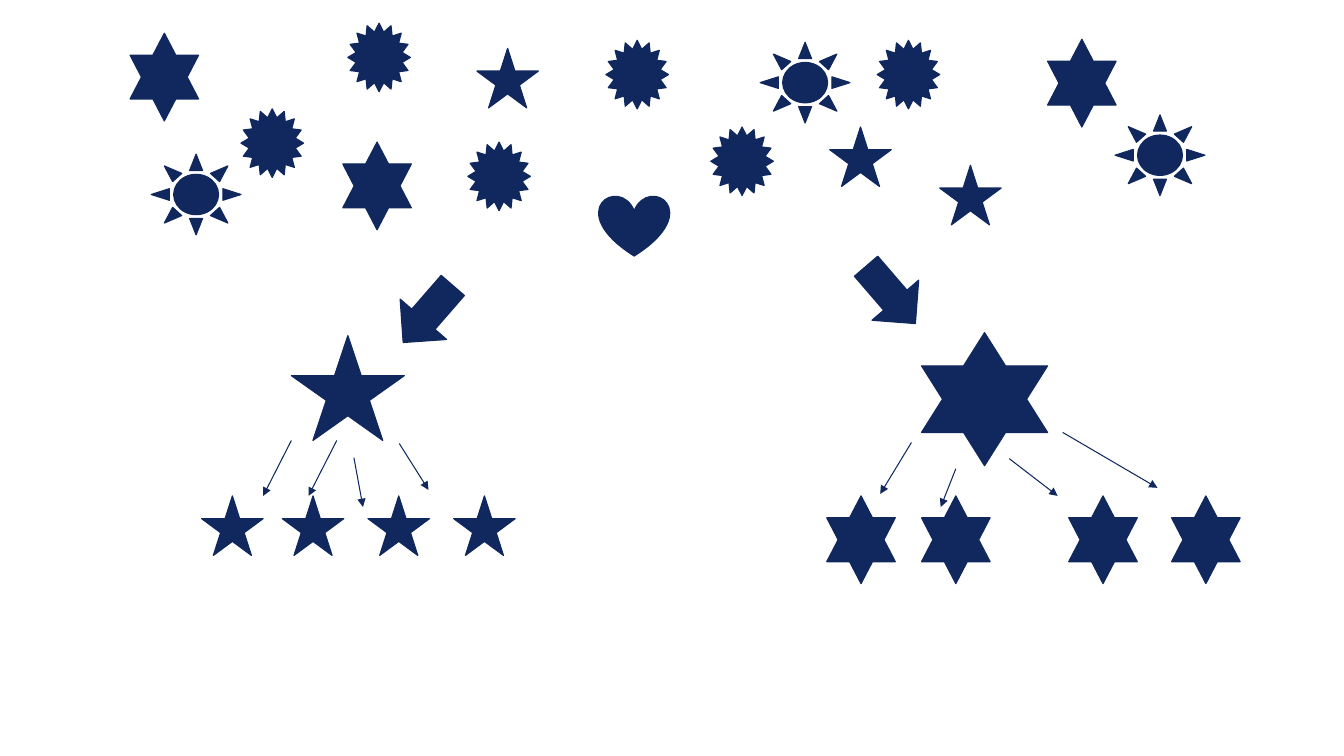
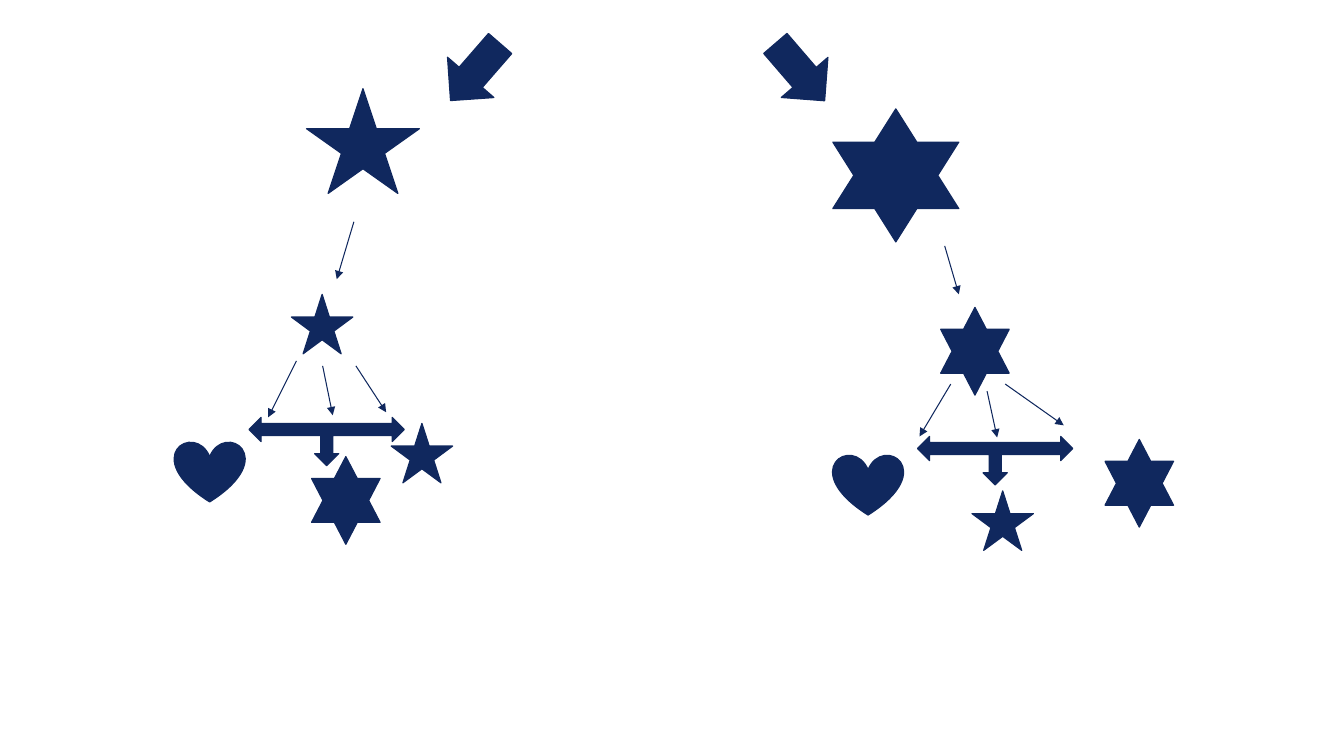
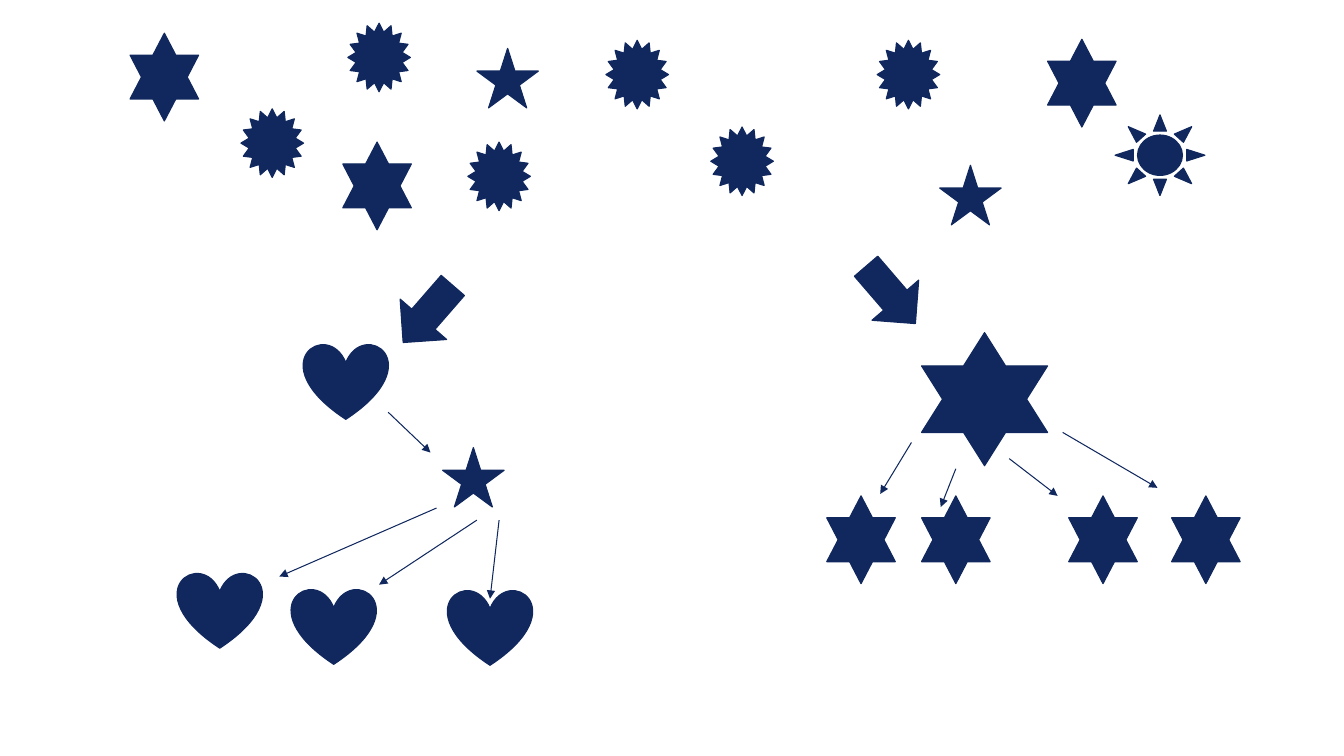
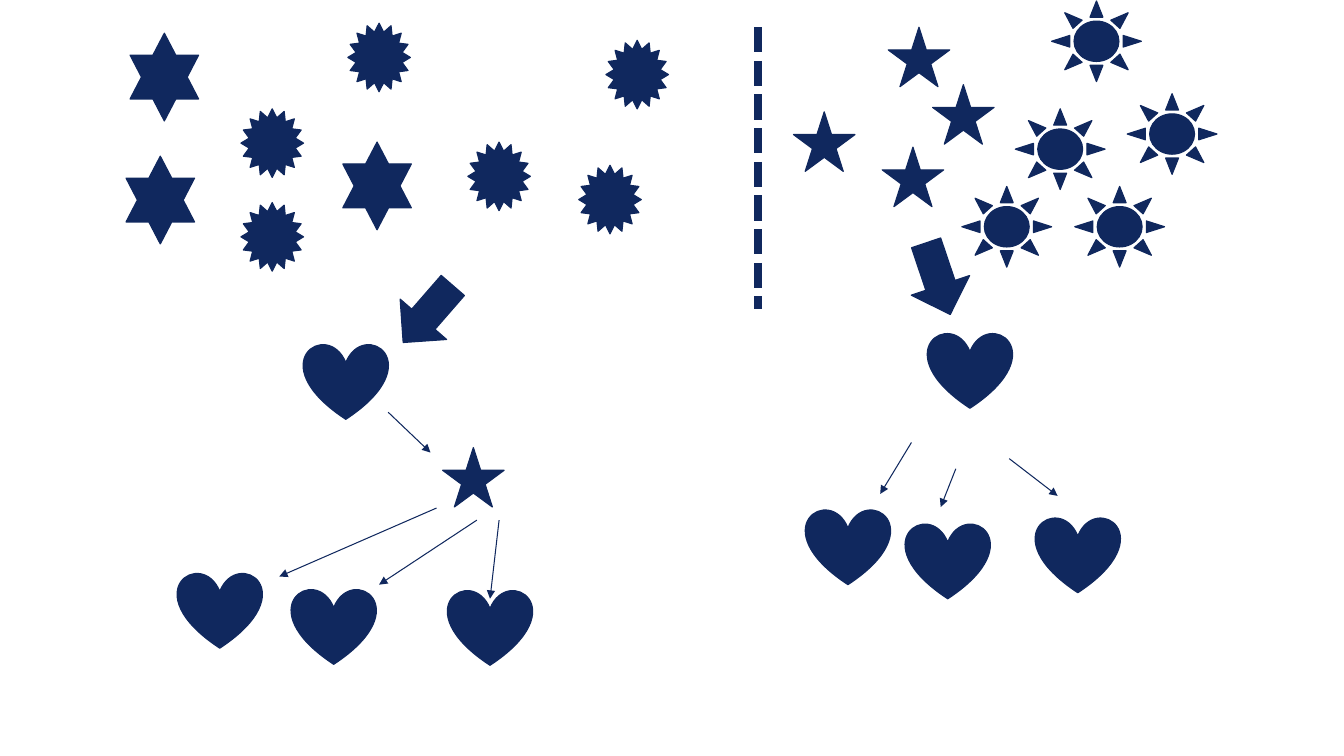
from dataclasses import dataclass
from typing import NamedTuple

from lxml.etree import SubElement
from pptx import Presentation
from pptx.dml.color import RGBColor
from pptx.enum.dml import MSO_LINE
from pptx.enum.shapes import MSO_CONNECTOR, MSO_SHAPE
from pptx.oxml.ns import qn
from pptx.shapes.connector import Connector
from pptx.slide import Slide
from pptx.util import Inches, Pt

NAVY = RGBColor(0x10, 0x28, 0x5E)
OUTLINE = Pt(0.85)
THIN = Pt(0.75)
THICK = Pt(6)


class Symbol(NamedTuple):
    preset: MSO_SHAPE
    width: float
    height: float
    rotation: float = 0


class Line(NamedTuple):
    x1: float
    y1: float
    x2: float
    y2: float


Points = list[tuple[float, float]]


@dataclass(frozen=True)
class Group:
    """Symbols with the top left corners where they stand, and thin arrows."""
    symbols: dict[Symbol, Points]
    arrows: tuple[Line, ...] = ()


STAR = Symbol(MSO_SHAPE.STAR_5_POINT, 0.61, 0.59)
BIG_STAR = Symbol(MSO_SHAPE.STAR_5_POINT, 1.12, 1.04)
HEXAGRAM = Symbol(MSO_SHAPE.STAR_6_POINT, 0.68, 0.87)
BIG_HEXAGRAM = Symbol(MSO_SHAPE.STAR_6_POINT, 1.25, 1.32)
BURST = Symbol(MSO_SHAPE.STAR_16_POINT, 0.62, 0.68)
SUN = Symbol(MSO_SHAPE.SUN, 0.89, 0.8)
HEART = Symbol(MSO_SHAPE.HEART, 0.7, 0.6)
BIG_HEART = Symbol(MSO_SHAPE.HEART, 0.84, 0.75)
ARROW_LEFT = Symbol(MSO_SHAPE.DOWN_ARROW, 0.61, 0.75, 41)
ARROW_RIGHT = Symbol(MSO_SHAPE.DOWN_ARROW, 0.61, 0.75, 319.3)
ARROW_STEEP = Symbol(MSO_SHAPE.DOWN_ARROW, 0.61, 0.75, 341.4)
THREE_WAY = Symbol(MSO_SHAPE.LEFT_RIGHT_UP_ARROW, 1.54, 0.48, 180)

# Groups that several slides share
LEFT_CROWD = Group({
    BURST: [(2.39, 1.08), (3.45, 0.23), (4.64, 1.41), (6.01, 0.4)],
    HEXAGRAM: [(1.29, 0.33), (3.4, 1.41)],
    ARROW_LEFT: [(3.94, 2.74)],
})
RIGHT_CROWD = Group({
    BURST: [(7.05, 1.26), (8.7, 0.4)],
    STAR: [(4.73, 0.48), (9.32, 1.64)],
    HEXAGRAM: [(10.39, 0.39)],
    SUN: [(11.06, 1.14)],
    ARROW_RIGHT: [(8.53, 2.55)],
})
RIGHT_FAN = Group({}, (
    Line(9.04, 4.39, 8.73, 4.9),
    Line(9.48, 4.65, 9.33, 5.03),
    Line(10.01, 4.55, 10.49, 4.92),
))
HEXAGRAM_FAMILY = Group(
    {
        BIG_HEXAGRAM: [(9.14, 3.3)],
        HEXAGRAM: [(x, 4.92) for x in (8.2, 9.14, 10.6, 11.62)],
    },
    RIGHT_FAN.arrows + (Line(10.54, 4.29, 11.48, 4.84),),
)
HEART_FAMILY = Group(
    {
        BIG_HEART: [(3.01, 3.41), (1.76, 5.68), (2.89, 5.84), (4.44, 5.85)],
        STAR: [(4.39, 4.44)],
    },
    (
        Line(3.85, 4.09, 4.27, 4.49),
        Line(4.33, 5.04, 2.77, 5.72),
        Line(4.73, 5.16, 3.76, 5.8),
        Line(4.95, 5.16, 4.86, 5.94),
    ),
)

# Groups of one slide
STAR_FAMILY = Group(
    {
        BIG_STAR: [(2.89, 3.33)],
        STAR: [(x, 4.92) for x in (2, 2.8, 3.65, 4.5)],
    },
    (
        Line(2.89, 4.37, 2.61, 4.92),
        Line(3.34, 4.37, 3.06, 4.92),
        Line(3.51, 4.54, 3.6, 5.03),
        Line(3.96, 4.4, 4.25, 4.86),
    ),
)
EXTRA_CROWD = Group({
    STAR: [(8.23, 1.26)],
    SUN: [(7.54, 0.42), (1.5, 1.53)],
    HEART: [(5.94, 1.94)],
})
STAR_CHOICE = Group(
    {
        ARROW_LEFT: [(4.41, 0.34)],
        BIG_STAR: [(3.04, 0.88)],
        STAR: [(2.89, 2.92), (3.88, 4.2)],
        THREE_WAY: [(2.47, 4.14)],
        HEART: [(1.73, 4.38)],
        HEXAGRAM: [(3.09, 4.53)],
    },
    (
        Line(3.51, 2.2, 3.34, 2.77),
        Line(2.94, 3.58, 2.66, 4.14),
        Line(3.2, 3.63, 3.3, 4.12),
        Line(3.53, 3.63, 3.83, 4.09),
    ),
)
HEXAGRAM_CHOICE = Group(
    {
        ARROW_RIGHT: [(7.63, 0.34)],
        BIG_HEXAGRAM: [(8.26, 1.08)],
        HEXAGRAM: [(9.33, 3.05), (10.96, 4.36)],
        THREE_WAY: [(9.1, 4.33)],
        HEART: [(8.26, 4.51)],
        STAR: [(9.64, 4.87)],
    },
    (
        Line(9.37, 2.44, 9.51, 2.92),
        Line(9.43, 3.81, 9.12, 4.33),
        Line(9.79, 3.88, 9.89, 4.34),
        Line(9.97, 3.81, 10.55, 4.22),
    ),
)
SEPARATED_CROWD = Group({
    BURST: [(5.74, 1.64), (2.39, 2.01)],
    HEXAGRAM: [(1.25, 1.55)],
    STAR: [(7.87, 1.11), (8.81, 0.27), (9.25, 0.84), (8.75, 1.46)],
    SUN: [(10.07, 1.08), (9.54, 1.85), (10.66, 1.85), (11.18, 0.93), (10.43, 0.01)],
    ARROW_STEEP: [(9, 2.39)],
    BIG_HEART: [(9.2, 3.3), (7.99, 5.05), (8.98, 5.19), (10.27, 5.13)],
})
BARRIER = Line(7.52, 0.27, 7.52, 3.07)

SLIDES = (
    (LEFT_CROWD, RIGHT_CROWD, EXTRA_CROWD, STAR_FAMILY, HEXAGRAM_FAMILY),
    (STAR_CHOICE, HEXAGRAM_CHOICE),
    (LEFT_CROWD, RIGHT_CROWD, HEART_FAMILY, HEXAGRAM_FAMILY),
    (LEFT_CROWD, SEPARATED_CROWD, HEART_FAMILY, RIGHT_FAN),
)


def add_symbol(page: Slide, symbol: Symbol, left: float, top: float) -> None:
    shape = page.shapes.add_shape(
        symbol.preset, Inches(left), Inches(top),
        Inches(symbol.width), Inches(symbol.height))
    shape.rotation = symbol.rotation
    shape.shadow.inherit = False
    shape.fill.solid()
    shape.fill.fore_color.rgb = NAVY
    shape.line.color.rgb = NAVY
    shape.line.width = OUTLINE


def add_line(page: Slide, line: Line, width: Pt) -> Connector:
    connector = page.shapes.add_connector(
        MSO_CONNECTOR.STRAIGHT, *(Inches(value) for value in line))
    connector.line.color.rgb = NAVY
    connector.line.width = width
    SubElement(connector._element.spPr, qn("a:effectLst"))
    return connector


def add_arrow(page: Slide, line: Line) -> None:
    connector = add_line(page, line, THIN)
    outline = connector.line._get_or_add_ln()
    SubElement(outline, qn("a:tailEnd"), type="triangle")


def add_group(page: Slide, group: Group) -> None:
    for symbol, corners in group.symbols.items():
        for left, top in corners:
            add_symbol(page, symbol, left, top)
    for arrow in group.arrows:
        add_arrow(page, arrow)


def main() -> None:
    deck = Presentation()
    deck.slide_width = Inches(13.33)
    deck.slide_height = Inches(7.5)
    blank = deck.slide_layouts[6]
    for groups in SLIDES:
        page = deck.slides.add_slide(blank)
        for group in groups:
            add_group(page, group)
    barrier = add_line(page, BARRIER, THICK)
    barrier.line.dash_style = MSO_LINE.SQUARE_DOT
    deck.save("out.pptx")


if __name__ == "__main__":
    main()
